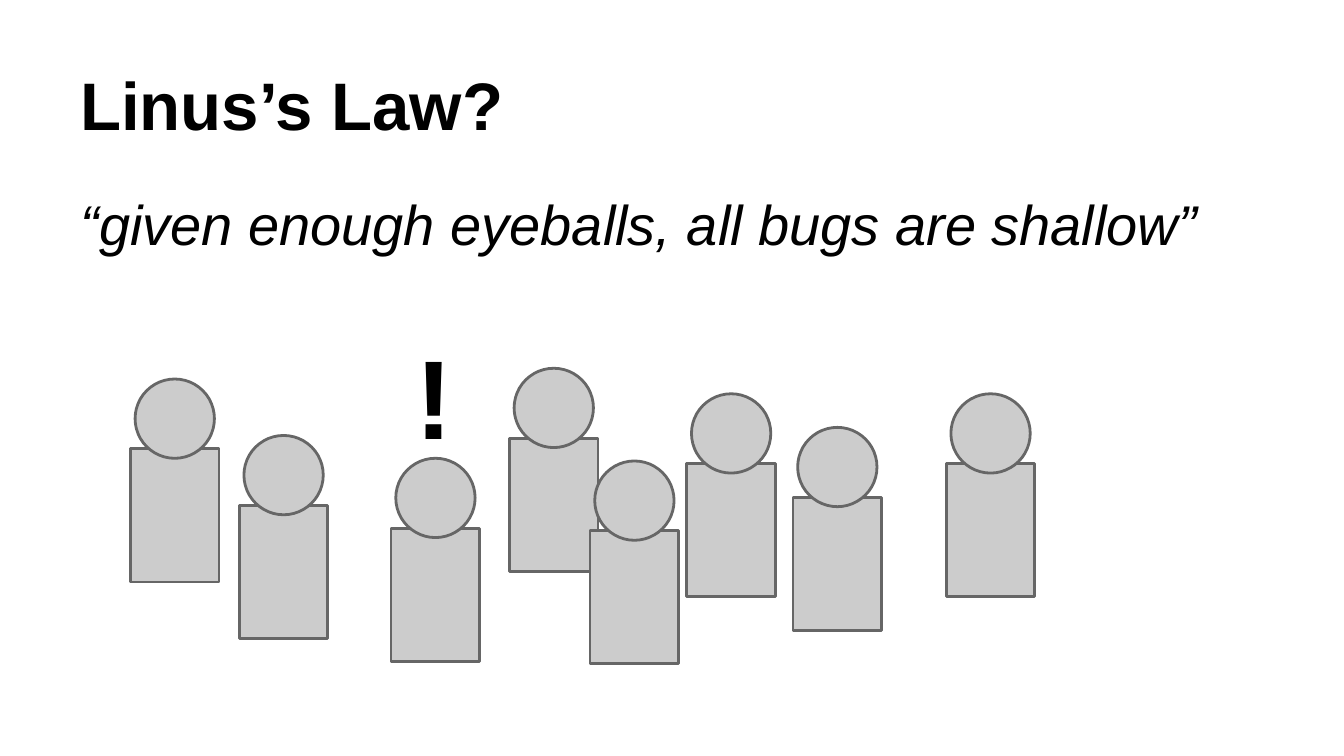
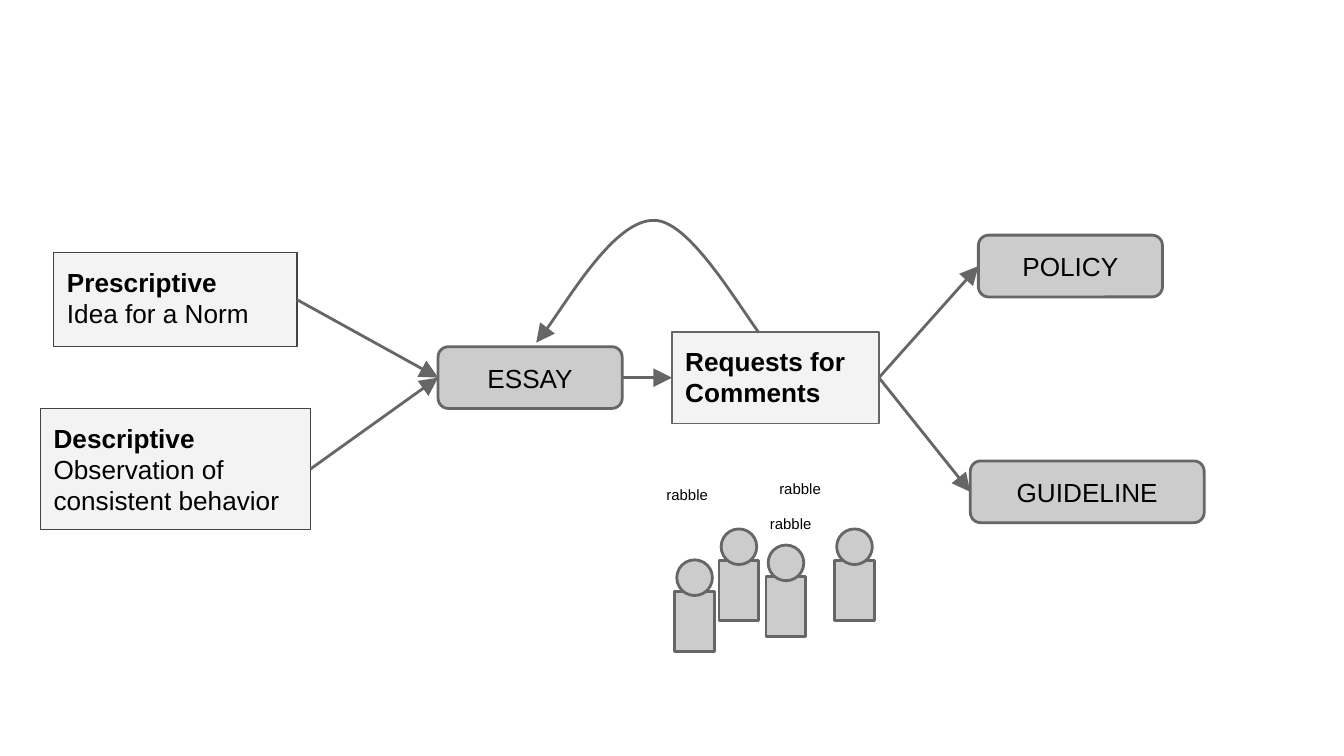
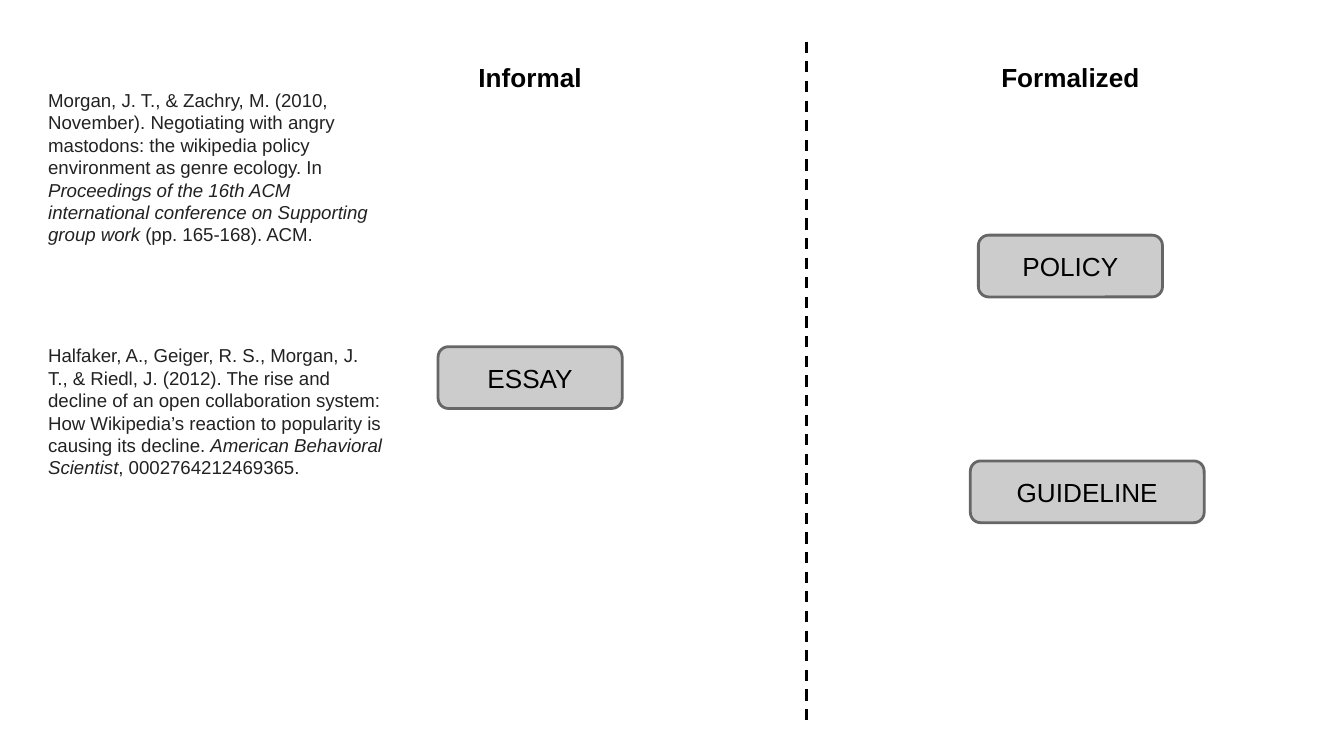
from lxml import etree
from pptx import Presentation
from pptx.dml.color import RGBColor
from pptx.enum.dml import MSO_LINE
from pptx.enum.shapes import MSO_CONNECTOR, MSO_SHAPE
from pptx.enum.text import MSO_ANCHOR, PP_ALIGN
from pptx.oxml.ns import qn
from pptx.util import Inches, Pt

RECT, ROUNDED, OVAL = MSO_SHAPE.RECTANGLE, MSO_SHAPE.ROUNDED_RECTANGLE, MSO_SHAPE.OVAL
STRAIGHT, DASH = MSO_CONNECTOR.STRAIGHT, MSO_LINE.DASH
TOP, MIDDLE, BOTTOM = MSO_ANCHOR.TOP, MSO_ANCHOR.MIDDLE, MSO_ANCHOR.BOTTOM
LEFT, CENTER = PP_ALIGN.LEFT, PP_ALIGN.CENTER
SITE_LEFT, SITE_RIGHT = 1, 3

FONT = "Arial"
COLORS = {
    "text": "000000",
    "citation": "222222",
    "gray": "CCCCCC",
    "outline": "666666",
    "note": "F3F3F3",
    "note_line": "434343",
}
GENRES = {
    "GUIDELINE": (7.22, 3.43, 1.74, 0.46),
    "POLICY": (7.28, 1.75, 1.37, 0.46),
    "ESSAY": (3.26, 2.58, 1.37, 0.46),
}
CROWD = [(5.11, 3.45), (5.9, 3.7), (7.04, 3.45), (0.97, 3.34),
         (1.78, 3.76), (2.91, 3.93), (3.79, 3.26), (4.39, 3.95)]
RABBLE = [(5.35, 4.17), (5.7, 4.29), (6.21, 4.17), (5.02, 4.4)]
RABBLE_LABELS = [(4.86, 3.55), (5.7, 3.5), (5.63, 3.76)]
LOOP = [(5.73, 2.58), (5.58, 2.43), (5.16, 1.64), (4.87, 1.64),
        (4.58, 1.63), (4.13, 2.39), (3.99, 2.55)]
CITATIONS = [
    (0.56, [
        ("Morgan, J. T., & Zachry, M. (2010, November). Negotiating with angry "
         "mastodons: the wikipedia policy environment as genre ecology. In ", ""),
        ("Proceedings of the 16th ACM international conference on Supporting group work", "i"),
        (" (pp. 165-168). ACM.", ""),
    ]),
    (2.46, [
        ("Halfaker, A., Geiger, R. S., Morgan, J. T., & Riedl, J. (2012). The rise and "
         "decline of an open collaboration system: How Wikipedia’s reaction to "
         "popularity is causing its decline. ", ""),
        ("American Behavioral Scientist", "i"),
        (", 0002764212469365.", ""),
    ]),
]


def rgb(name):
    """Return the named colour."""
    return RGBColor.from_string(COLORS[name])


def write(sp, paragraphs, size, color="text", align=LEFT, anchor=TOP):
    """Fill a shape with paragraphs of (text, style) runs."""
    tf = sp.text_frame
    tf.word_wrap = True
    tf.vertical_anchor = anchor
    tf.margin_left = tf.margin_right = tf.margin_top = tf.margin_bottom = Inches(0.1)
    for i, runs in enumerate(paragraphs):
        p = tf.add_paragraph() if i else tf.paragraphs[0]
        p.alignment = align
        for text, style in runs:
            r = p.add_run()
            r.text = text
            r.font.name, r.font.size = FONT, Pt(size)
            r.font.bold, r.font.italic = "b" in style, "i" in style
            r.font.color.rgb = rgb(color)


def add_text(slide, box, runs, size, **options):
    """Add a text box holding one paragraph."""
    sp = slide.shapes.add_textbox(*map(Inches, box))
    write(sp, [runs], size, **options)


def add_box(slide, kind, box, fill="gray", line="outline", width=1.5):
    """Add a filled and outlined shape."""
    sp = slide.shapes.add_shape(kind, *map(Inches, box))
    sp.shadow.inherit = False
    sp.fill.solid()
    sp.fill.fore_color.rgb = rgb(fill)
    sp.line.color.rgb = rgb(line)
    sp.line.width = Pt(width)
    return sp


def add_person(slide, x, y, scale=1):
    """Add a figure whose body starts at x, y."""
    w, h, head = 0.66 * scale, 0.99 * scale, 0.59 * scale
    add_box(slide, RECT, (x, y, w, h))
    add_box(slide, OVAL, (x + (w - head) / 2, y - 0.52 * scale, head, head))


def add_genre(slide, name):
    """Add the rounded box of a genre."""
    sp = add_box(slide, ROUNDED, GENRES[name])
    sp.adjustments[0] = 0.167
    write(sp, [[(name, "")]], 14, align=CENTER, anchor=MIDDLE)
    return sp


def add_note(slide, box, paragraphs, line="note_line"):
    """Add a pale box with left-aligned text."""
    sp = add_box(slide, RECT, box, "note", line, 0.75)
    write(sp, paragraphs, 14)
    return sp


def add_arrowhead(sp):
    """Put a large triangle at the end of a line."""
    etree.SubElement(sp.line._get_or_add_ln(), qn("a:tailEnd"),
                     type="triangle", w="lg", len="lg")


def add_line(slide, start=(0, 0), end=(0, 0), color="outline"):
    """Add a straight line without shadow."""
    cxn = slide.shapes.add_connector(STRAIGHT, *map(Inches, (*start, *end)))
    cxn.line.color.rgb = rgb(color)
    cxn.line.width = Pt(1.5)
    etree.SubElement(cxn._element.spPr, qn("a:effectLst"))
    return cxn


def add_arrow(slide, source, target):
    """Join the right side of one box to the left side of another."""
    cxn = add_line(slide)
    cxn.begin_connect(source, SITE_RIGHT)
    cxn.end_connect(target, SITE_LEFT)
    add_arrowhead(cxn)


def add_curve(slide, points):
    """Add a curved arrow from a start point and Bezier triples."""
    emu = [(Inches(x), Inches(y)) for x, y in points]
    builder = slide.shapes.build_freeform(*emu[0])
    builder.add_line_segments(emu[1:], close=False)
    sp = builder.convert_to_shape()
    sp.shadow.inherit = False
    sp.fill.background()
    sp.line.color.rgb = rgb("outline")
    sp.line.width = Pt(1.5)
    add_arrowhead(sp)
    segments = list(sp._element.iter(qn("a:lnTo")))
    outline = segments[0].getparent()
    for i in range(0, len(segments), 3):
        bezier = etree.SubElement(outline, qn("a:cubicBezTo"))
        for segment in segments[i:i + 3]:
            bezier.append(segment[0])
            outline.remove(segment)


def build_law(slide):
    """Build the slide with the quotation and the crowd."""
    add_text(slide, (0.5, 0.23, 9, 0.94), [("Linus’s Law?", "b")], 36, anchor=BOTTOM)
    add_text(slide, (0.5, 1.31, 9, 4.07),
             [("“given enough eyeballs, all bugs are shallow”", "i")], 30)
    for x, y in CROWD:
        add_person(slide, x, y)
    add_text(slide, (2.99, 2.34, 0.5, 0.94), [("!", "b")], 60)


def build_process(slide):
    """Build the slide showing how norms become policy."""
    add_curve(slide, LOOP)
    prescriptive = add_note(slide, (0.4, 1.88, 1.81, 0.7),
                            [[("Prescriptive", "b")], [("Idea for a Norm", "")]])
    descriptive = add_note(slide, (0.3, 3.04, 2.01, 0.9),
                           [[("Descriptive", "b")],
                            [("Observation of consistent behavior", "")]])
    requests = add_note(slide, (5, 2.47, 1.54, 0.68),
                        [[("Requests for Comments", "b")]], "outline")
    guideline, policy, essay = [add_genre(slide, name) for name in GENRES]
    for source, target in [(requests, policy), (requests, guideline),
                           (prescriptive, essay), (descriptive, essay), (essay, requests)]:
        add_arrow(slide, source, target)
    for x, y in RABBLE:
        add_person(slide, x, y, 0.45)
    for x, y in RABBLE_LABELS:
        add_text(slide, (x, y, 1.43, 0.33), [("rabble", "")], 8)


def build_genres(slide):
    """Build the slide dividing informal from formalized genres."""
    for name in GENRES:
        add_genre(slide, name)
    add_line(slide, (6, 0.31), (6, 5.39), "text").line.dash_style = DASH
    for x, heading in [(2.73, "Informal"), (6.75, "Formalized")]:
        add_text(slide, (x, 0.36, 2.43, 0.56), [(heading, "b")], 14, align=CENTER)
    for y, runs in CITATIONS:
        add_text(slide, (0.26, y, 2.68, 1.35), runs, 10, color="citation")


def main():
    """Build and save the presentation."""
    prs = Presentation()
    prs.slide_width, prs.slide_height = Inches(10), Inches(10 * 9 / 16)
    for build in (build_law, build_process, build_genres):
        build(prs.slides.add_slide(prs.slide_layouts[6]))
    prs.save("out.pptx")


if __name__ == "__main__":
    main()
